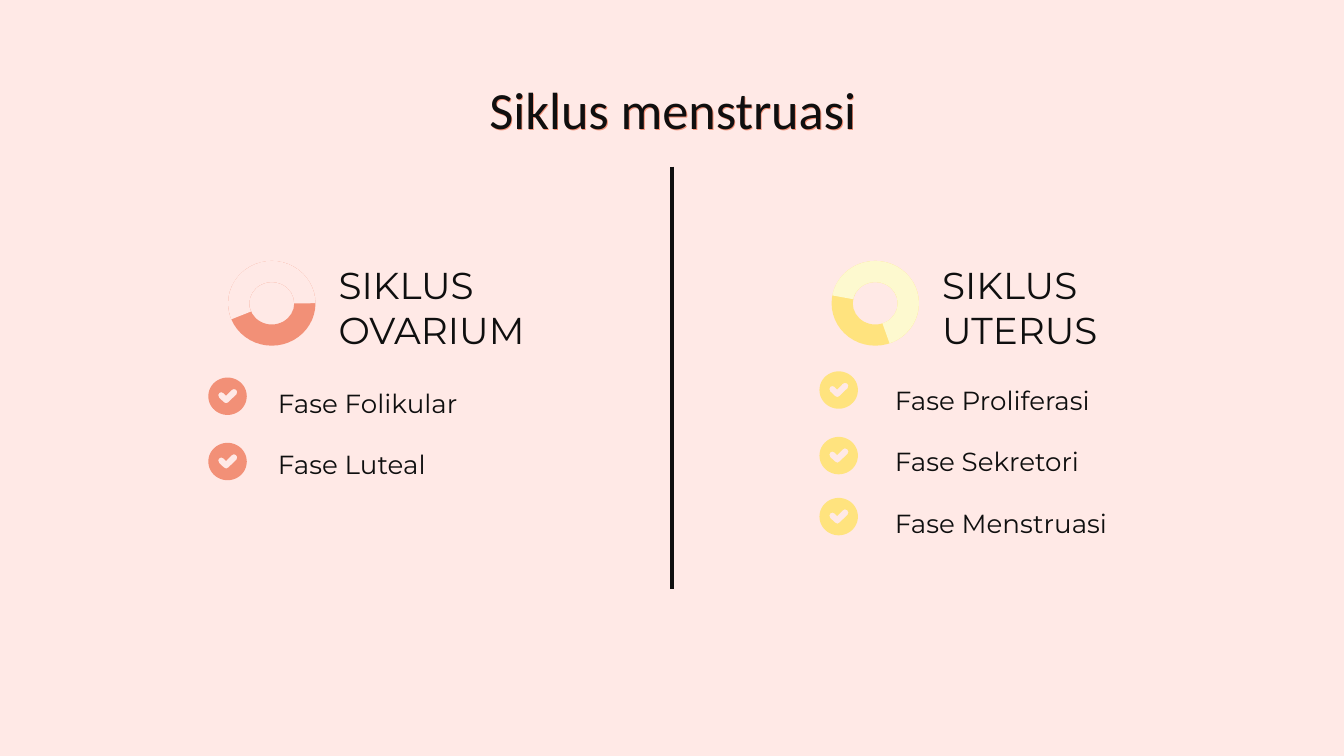
from math import cos, pi, sin

from lxml.etree import SubElement
from pptx import Presentation
from pptx.dml.color import RGBColor
from pptx.enum.shapes import MSO_CONNECTOR, MSO_SHAPE
from pptx.enum.text import MSO_ANCHOR, PP_ALIGN
from pptx.oxml.ns import qn
from pptx.util import Pt

INK, PINK, CORAL, YELLOW, CREAM = "0F0F0F", "FFE9E6", "F29077", "FFE37E", "FDF9CF"
RING_W, RING_H = 46.8, 45.4
BADGE_W, BADGE_H = 20.6, 20
# Outline of the check mark, in points from the badge's top left corner
CHECK = [(12.4, 6.7), (13.6, 6.1), (14.9, 6.5), (15.5, 7.7), (15.1, 9), (10.8, 13.2),
         (9.6, 13.8), (8.3, 13.2), (5.8, 10.8), (5.3, 9.4), (5.8, 8.3), (6.9, 7.8),
         (8.1, 8.3), (9.5, 9.7)]


def rgb(color):
    return RGBColor.from_string(color)


def fill_plain(sp, color):
    sp.shadow.inherit = False
    sp.fill.solid()
    sp.fill.fore_color.rgb = rgb(color)
    sp.line.fill.background()


def add_text(s, box, lines, size, font="Montserrat", anchor=MSO_ANCHOR.TOP,
             align=PP_ALIGN.LEFT, after=0):
    sp = s.shapes.add_textbox(*map(Pt, box))
    tf = sp.text_frame
    tf.word_wrap = True
    tf.vertical_anchor = anchor
    tf.margin_left = tf.margin_right = tf.margin_top = tf.margin_bottom = Pt(7.2)
    for i, line in enumerate(lines):
        p = tf.add_paragraph() if i else tf.paragraphs[0]
        p.alignment = align
        p.space_after = Pt(after)
        r = p.add_run()
        r.text = line
        r.font.size = Pt(size)
        r.font.name = font
        r.font.color.rgb = rgb(INK)
    return sp


def add_title(s, box, text):
    sp = add_text(s, box, [text], 28, "Calibri", MSO_ANCHOR.MIDDLE, PP_ALIGN.CENTER)
    effects = SubElement(sp._element.spPr, qn("a:effectLst"))
    shadow = SubElement(effects, qn("a:outerShdw"), dist=str(Pt(1)), dir="3600000")
    SubElement(shadow, qn("a:srgbClr"), val=CORAL)


def add_divider(s, x, top, bottom):
    line = s.shapes.add_connector(MSO_CONNECTOR.STRAIGHT, Pt(x), Pt(top), Pt(x), Pt(bottom))
    line.line.color.rgb = rgb(INK)
    line.line.width = Pt(2.25)
    SubElement(line._element.spPr, qn("a:effectLst"))


def add_ring(s, left, top, color, arc_color, start, end):
    """Draw a donut partly covered by an arc running between two angles in degrees."""
    box = [Pt(v) for v in (left, top, RING_W, RING_H)]
    ring = s.shapes.add_shape(MSO_SHAPE.DONUT, *box)
    ring.adjustments[0] = 0.25
    fill_plain(ring, color)
    arc = s.shapes.add_shape(MSO_SHAPE.BLOCK_ARC, *box)
    for i, value in enumerate((start * 0.6, end * 0.6, 0.25)):
        arc.adjustments[i] = value
    fill_plain(arc, arc_color)


def add_badge(s, left, top, color):
    """Draw a disc with a check mark cut out of it."""
    steps = 60
    disc = [(BADGE_W / 2 * (1 + cos(2 * pi * i / steps)),
             BADGE_H / 2 * (1 + sin(2 * pi * i / steps))) for i in range(steps)]
    units = 100
    disc, check = [[(x * units, y * units) for x, y in outline]
                   for outline in (disc, reversed(CHECK))]
    fb = s.shapes.build_freeform(*disc[0], scale=Pt(1) / units)
    fb.add_line_segments(disc[1:], close=True)
    fb.move_to(*check[0])
    fb.add_line_segments(check[1:], close=True)
    fill_plain(fb.convert_to_shape(Pt(left), Pt(top)), color)


def add_cycle(s, left, top, heading, ring, phases, list_at, badge_x, badge_tops):
    """Place one cycle; list_at, badge_x and badge_tops count from its top left corner."""
    add_ring(s, left, top, *ring)
    add_text(s, (left + 52.2, top + 12.2, 163.4, 43.9), [heading], 20,
             anchor=MSO_ANCHOR.BOTTOM)
    add_text(s, (left + list_at[0], top + list_at[1], 163.4, 61.9), phases, 14, after=16)
    for badge_top in badge_tops:
        add_badge(s, left + badge_x, top + badge_top, ring[0])


def main():
    prs = Presentation()
    prs.slide_width, prs.slide_height = Pt(720), Pt(405)
    s = prs.slides.add_slide(prs.slide_layouts[6])
    s.background.fill.solid()
    s.background.fill.fore_color.rgb = rgb(PINK)

    add_title(s, (56.9, 35.3, 607, 45.4), "Siklus menstruasi")
    add_cycle(s, 122.2, 139.8, "SIKLUS OVARIUM", (CORAL, PINK, 158.4, 0),
              ["Fase Folikular", "Fase Luteal"], (19.6, 60.4), -10.6, (62.5, 97.5))
    add_cycle(s, 445.5, 139.8, "SIKLUS UTERUS", (YELLOW, CREAM, 190.4, 70.3),
              ["Fase Proliferasi", "Fase Sekretori", "Fase Menstruasi"],
              (26.8, 59), -6.5, (59.2, 94.3, 127))
    add_divider(s, 360, 89.3, 315.4)
    prs.save("out.pptx")


if __name__ == "__main__":
    main()
